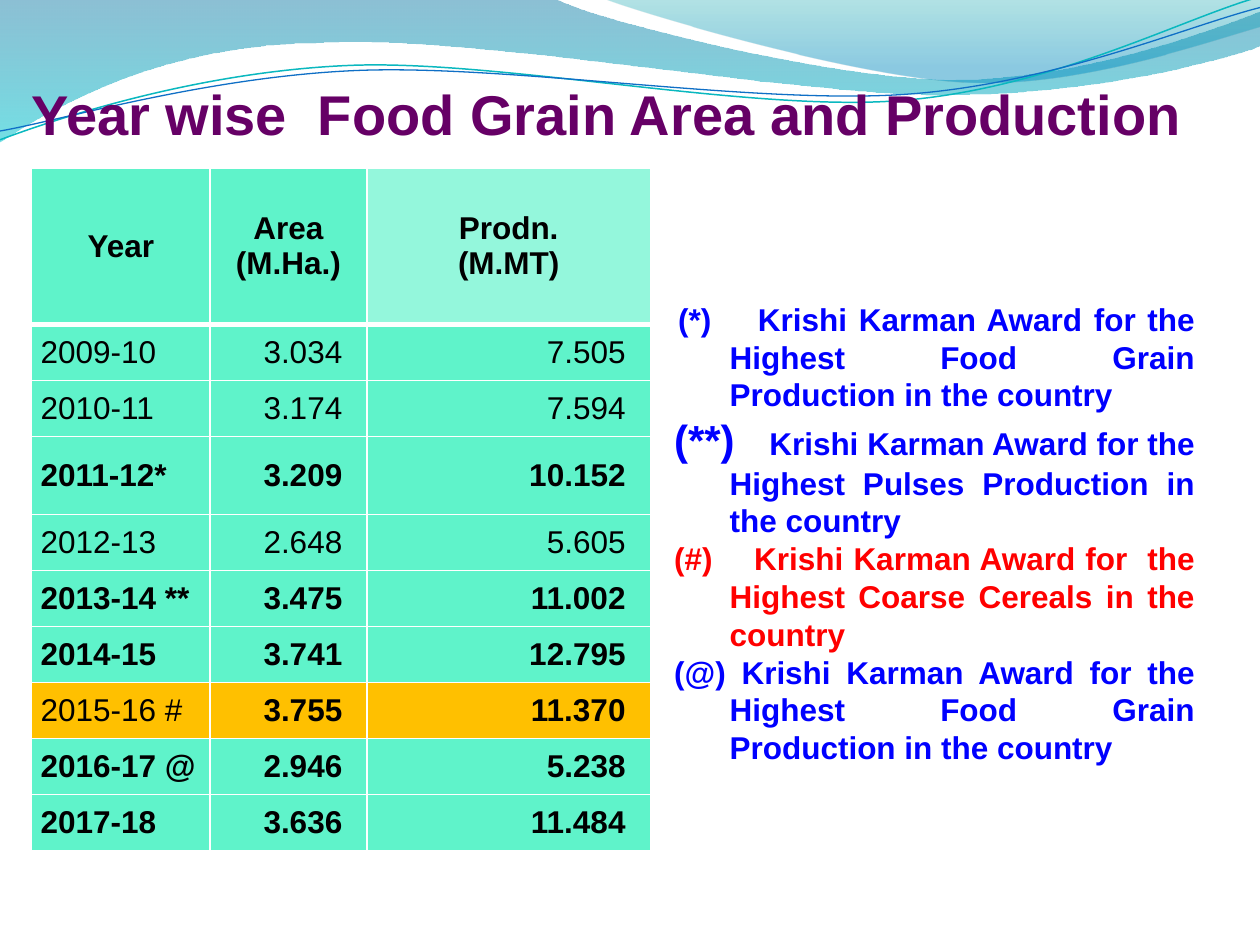
from lxml import etree
from pptx import Presentation
from pptx.dml.color import RGBColor
from pptx.enum.text import MSO_ANCHOR, MSO_AUTO_SIZE, PP_ALIGN
from pptx.oxml.ns import qn
from pptx.util import Cm, Pt

LEFT, CENTER, RIGHT, JUSTIFY = PP_ALIGN.LEFT, PP_ALIGN.CENTER, PP_ALIGN.RIGHT, PP_ALIGN.JUSTIFY
MIDDLE, BOTTOM = MSO_ANCHOR.MIDDLE, MSO_ANCHOR.BOTTOM
NO_FIT = MSO_AUTO_SIZE.NONE
CM_PER_INCH = 2.54

MINT, PALE_MINT, AMBER, WHITE = "5FF3CA", "94F7DC", "FFC000", "FFFFFF"
BLACK, BLUE, RED, PURPLE = "000000", "0000FF", "FF0000", "660066"

BANDS = [
    {"outline": [[(0, -0.01)], [(4.4, -0.01)],
                 [(4.76, 0.17), (6.64, 0.63), (7.58, 0.63)],
                 [(8.53, 0.63), (9.58, 0.26), (10, 0.09)], [(10.01, 0.36)],
                 [(9.83, 0.44), (8.7, 0.76), (7.46, 0.75)],
                 [(6.22, 0.75), (3.82, 0.28), (2.57, 0.34)],
                 [(1.29, 0.35), (0.46, 0.83), (-0.01, 1.13)]],
     "stops": [(0, "0074A1", 45), (1, "00C6CF", 55)]},
    {"outline": [[(4.79, -0.01)],
                 [(5.09, 0.11), (6.82, 0.62), (7.69, 0.65)],
                 [(8.56, 0.69), (9.61, 0.32), (10, 0.21)], [(10, 0)]],
     "stops": [(0, "00A1A9", 30), (0.8, "008BBF", 45)]},
]
STRANDS = [
    {"outline": [[(0, 1.11)],
                 [(0.48, 0.93), (1.58, 0.57), (2.77, 0.52)],
                 [(3.95, 0.47), (5.93, 0.89), (7.13, 0.8)],
                 [(8.33, 0.71), (9.38, 0.15), (9.98, -0.02)]],
     "color": "0AB8BF", "width": 0.85},
    {"outline": [[(0, 1.04)],
                 [(0.47, 0.96), (1.64, 0.61), (2.83, 0.56)],
                 [(4.03, 0.51), (5.97, 0.83), (7.17, 0.75)],
                 [(8.36, 0.67), (9.41, 0.21), (10, 0.06)]],
     "color": "0F6FC6", "width": 0.75},
]

HEADERS = ["Year", "Area\n(M.Ha.)", "Prodn.\n(M.MT)"]
HARVESTS = [
    ("2009-10", "3.034", "7.505"),
    ("2010-11", "3.174", "7.594"),
    ("2011-12*", "3.209", "10.152"),
    ("2012-13", "2.648", "5.605"),
    ("2013-14 **", "3.475", "11.002"),
    ("2014-15", "3.741", "12.795"),
    ("2015-16 #", "3.755", "11.370"),
    ("2016-17 @", "2.946", "5.238"),
    ("2017-18", "3.636", "11.484"),
]
PLAIN_YEARS = {"2009-10", "2010-11", "2012-13"}
TALL_YEAR = "2011-12*"
AWARD_YEAR = "2015-16 #"

FOOD_AWARD = "Krishi Karman Award for the Highest Food Grain Production in the country"
PULSES_AWARD = "Krishi Karman Award for the Highest Pulses Production in the country"
CEREALS_AWARD = "Krishi Karman Award for  the Highest Coarse Cereals in the country"
NOTES = [
    {"mark": "(*)", "size": 18, "gap": 20, "award": FOOD_AWARD, "color": BLUE, "hanging": 1.04},
    {"mark": "(**)", "size": 24, "gap": 13, "award": PULSES_AWARD, "color": BLUE, "hanging": 1.12},
    {"mark": "(#)", "size": 18, "gap": 18, "award": CEREALS_AWARD, "color": RED, "hanging": 1.12},
    {"mark": "(@)", "size": 18, "gap": 0, "award": FOOD_AWARD, "color": BLUE, "hanging": 1.12},
]


def rgb(value):
    """Return the colour for a hex string."""
    return RGBColor.from_string(value)


def apply(target, values):
    """Set attributes from a dict of format values."""
    for name, value in values.items():
        setattr(target, name, value)


def format_font(font, size, color, bold=True):
    """Give a font the slide's typeface and the chosen look."""
    apply(font, {"name": "Arial", "size": Pt(size), "bold": bold})
    font.color.rgb = rgb(color)


def to_lengths(points):
    """Turn points in inches into lengths."""
    return [(Cm(x * CM_PER_INCH), Cm(y * CM_PER_INCH)) for x, y in points]


def add_wave(page, outline, closed):
    """Add an outline of straight lines and cubic curves without shadow."""
    corners = to_lengths(segment[-1] for segment in outline)
    builder = page.shapes.build_freeform(*corners[0])
    builder.add_line_segments(corners[1:], close=closed)
    wave = builder.convert_to_shape()
    wave.shadow.inherit = False
    lines = list(wave._element.iter(qn("a:lnTo")))
    for line, segment in zip(lines, outline[1:]):
        if len(segment) == 3:
            curve = etree.Element(qn("a:cubicBezTo"))
            for x, y in to_lengths(segment):
                etree.SubElement(curve, qn("a:pt"), x=str(x - wave.left), y=str(y - wave.top))
            line.getparent().replace(line, curve)
    return wave


def add_band(page, outline, stops):
    """Add a wave filled with a translucent downward gradient."""
    band = add_wave(page, outline, True)
    band.line.fill.background()
    band.fill.gradient()
    band.fill.gradient_angle = 270
    for stop, (position, color, _) in zip(band.fill.gradient_stops, stops):
        stop.position = position
        stop.color.rgb = rgb(color)
    tints = band._element.spPr.iter(qn("a:srgbClr"))
    for tint, (_, _, opacity) in zip(tints, stops):
        etree.SubElement(tint, qn("a:alpha"), val=str(opacity * 1000))


def add_strand(page, outline, color, width):
    """Add a thin wavy line."""
    strand = add_wave(page, outline, False)
    strand.fill.background()
    strand.line.color.rgb = rgb(color)
    strand.line.width = Pt(width)


def set_title(page, text):
    """Place the title in front of the waves."""
    title = page.shapes.title
    apply(title, {"left": Cm(0.64), "top": Cm(0.84), "width": Cm(24.76), "height": Cm(2.11)})
    frame = title.text_frame
    frame.text = text
    apply(frame, {"vertical_anchor": BOTTOM, "auto_size": NO_FIT, "word_wrap": True,
                  "margin_left": 0, "margin_right": 0, "margin_bottom": 0})
    para = frame.paragraphs[0]
    para.alignment = LEFT
    format_font(para.runs[0].font, 32, PURPLE)
    page.shapes._spTree.append(title._element)


def set_borders(cell, top, bottom):
    """Draw white borders round a cell."""
    properties = cell._tc.get_or_add_tcPr()
    widths = {"a:lnL": 1, "a:lnR": 1, "a:lnT": top, "a:lnB": bottom}
    for index, (side, width) in enumerate(widths.items()):
        border = etree.Element(qn(side), w=str(Pt(width)))
        fill = etree.SubElement(border, qn("a:solidFill"))
        etree.SubElement(fill, qn("a:srgbClr"), val=WHITE)
        properties.insert(index, border)


def fill_cell(cell, text, fill, align, bold, right_margin=0.18, top=1, bottom=1):
    """Write one table cell."""
    cell.text = text
    cell.fill.solid()
    cell.fill.fore_color.rgb = rgb(fill)
    apply(cell, {"vertical_anchor": MIDDLE, "margin_left": Cm(0.18),
                 "margin_right": Cm(right_margin), "margin_top": 0, "margin_bottom": 0})
    set_borders(cell, top, bottom)
    for para in cell.text_frame.paragraphs:
        para.alignment = align
        format_font(para.runs[0].font, 18, BLACK, bold)


def add_harvest_table(page):
    """Add the table of area and production by year."""
    table = page.shapes.add_table(len(HARVESTS) + 1, len(HEADERS), Cm(0.64), Cm(3.39),
                                  Cm(12.47), Cm(13.76)).table
    table.horz_banding = False
    for column, width in zip(table.columns, (3.59, 3.17, 5.71)):
        column.width = Cm(width)
    for index, (text, fill) in enumerate(zip(HEADERS, (MINT, MINT, PALE_MINT))):
        fill_cell(table.cell(0, index), text, fill, CENTER, True, bottom=3)
    table.rows[0].height = Cm(3.15)
    for index, (year, *amounts) in enumerate(HARVESTS, 1):
        table.rows[index].height = Cm(1.57 if year == TALL_YEAR else 1.13)
        fill = AMBER if year == AWARD_YEAR else MINT
        bold = year not in PLAIN_YEARS
        top = 3 if index == 1 else 1
        fill_cell(table.cell(index, 0), year, fill, LEFT, bold and year != AWARD_YEAR, top=top)
        for column, amount in enumerate(amounts, 1):
            fill_cell(table.cell(index, column), amount, fill, RIGHT, bold, 0.5, top)


def add_notes(page):
    """Add the award notes with hanging marks."""
    frame = page.shapes.add_textbox(Cm(13.34), Cm(5.92), Cm(11), Cm(9.75)).text_frame
    frame.word_wrap = True
    for index, note in enumerate(NOTES):
        para = frame.add_paragraph() if index else frame.paragraphs[0]
        para.alignment = JUSTIFY
        properties = para._p.get_or_add_pPr()
        properties.set("marL", str(Cm(1.12)))
        properties.set("indent", str(-Cm(note["hanging"])))
        spans = ((note["mark"], note["size"], 0), (" ", note["size"], note["gap"]),
                 (note["award"], 18, 0))
        for text, size, spacing in spans:
            span = para.add_run()
            span.text = text
            format_font(span.font, size, note["color"])
            if spacing:
                span._r.get_or_add_rPr().set("spc", str(spacing * 100))


def main():
    """Build the slide and save it."""
    deck = Presentation()
    apply(deck, {"slide_width": Cm(25.4), "slide_height": Cm(19.05)})
    page = deck.slides.add_slide(deck.slide_layouts[5])
    for band in BANDS:
        add_band(page, **band)
    for strand in STRANDS:
        add_strand(page, **strand)
    set_title(page, "Year wise  Food Grain Area and Production")
    add_harvest_table(page)
    add_notes(page)
    deck.save("out.pptx")


if __name__ == "__main__":
    main()
